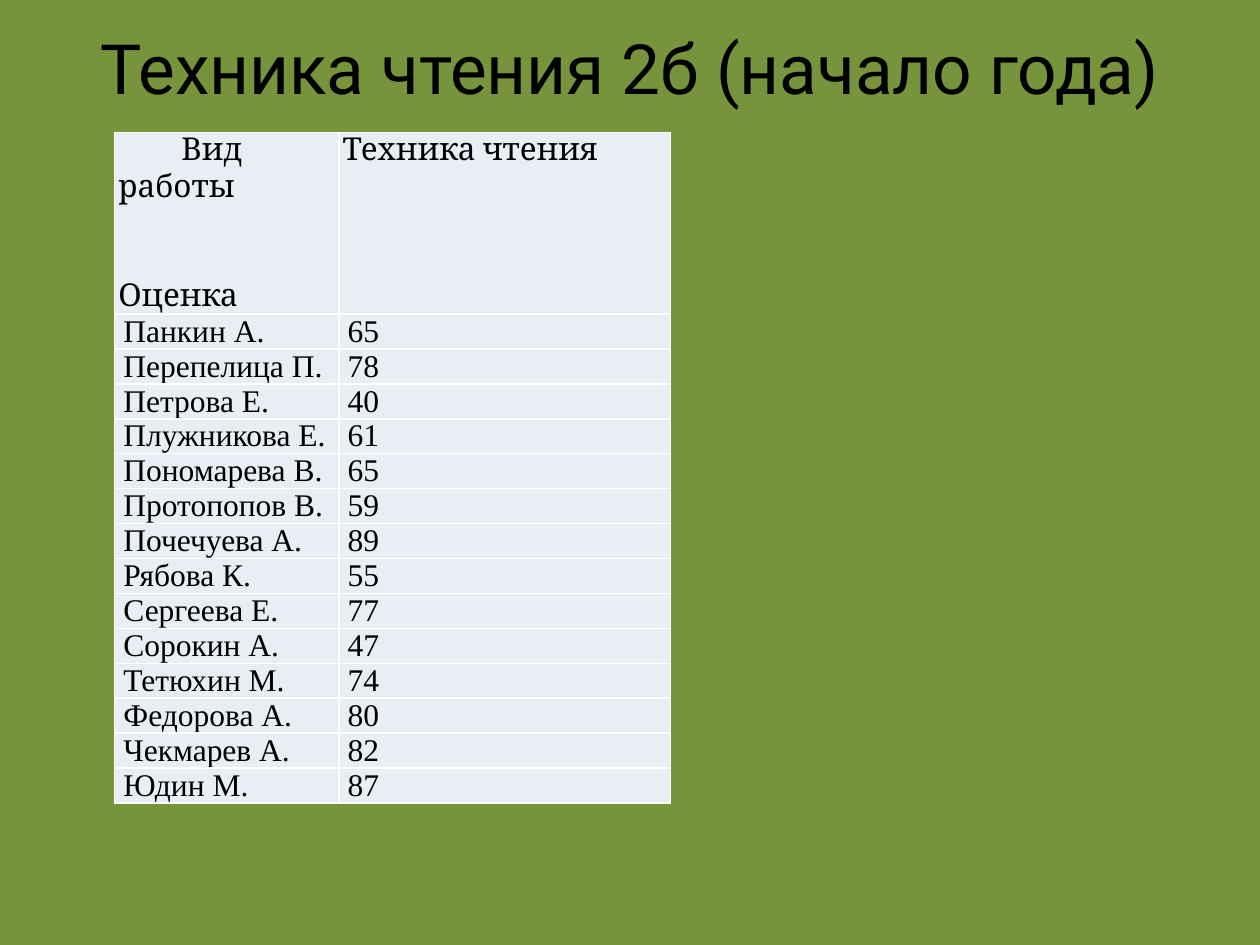
from dataclasses import dataclass

from lxml.etree import SubElement
from pptx import Presentation
from pptx.dml.color import RGBColor
from pptx.enum.text import MSO_ANCHOR, PP_ALIGN
from pptx.oxml.ns import qn
from pptx.util import Inches, Pt

COLORS = {"background": "77933C", "cell": "E9EDF4", "border": "FFFFFF", "text": "000000"}
SLIDE_WIDTH, SLIDE_HEIGHT = Inches(10), Inches(7.5)
COLUMN_WIDTHS = Inches(1.78), Inches(2.63)
HEADER_HEIGHT, ROW_HEIGHT = Inches(1.44), Inches(0.27)


@dataclass(frozen=True)
class Reading:
    pupil: str
    words: int


@dataclass(frozen=True)
class CellStyle:
    font: str
    inset: float


HEADER = CellStyle("Cambria", 0.03)
BODY = CellStyle("Times New Roman", 0.07)
READINGS = [
    Reading("Панкин А.", 65),
    Reading("Перепелица П.", 78),
    Reading("Петрова Е.", 40),
    Reading("Плужникова Е.", 61),
    Reading("Пономарева В.", 65),
    Reading("Протопопов В.", 59),
    Reading("Почечуева А.", 89),
    Reading("Рябова К.", 55),
    Reading("Сергеева Е.", 77),
    Reading("Сорокин А.", 47),
    Reading("Тетюхин М.", 74),
    Reading("Федорова А.", 80),
    Reading("Чекмарев А.", 82),
    Reading("Юдин М.", 87),
]


def color(name: str) -> RGBColor:
    return RGBColor.from_string(COLORS[name])


def style_font(paragraph, name: str, size: float) -> None:
    paragraph.font.name = name
    paragraph.font.size = Pt(size)
    paragraph.font.color.rgb = color("text")


def add_borders(cell) -> None:
    """Put the border lines ahead of the cell's fill, as the schema orders them."""
    properties = cell._tc.get_or_add_tcPr()
    for position, side in enumerate(("lnL", "lnR", "lnT", "lnB")):
        line = SubElement(properties, qn(f"a:{side}"), w=str(Pt(1)))
        fill = SubElement(line, qn("a:solidFill"))
        SubElement(fill, qn("a:srgbClr"), val=COLORS["border"])
        properties.insert(position, line)


def fill_cell(cell, text: str, style: CellStyle) -> None:
    cell.fill.solid()
    cell.fill.fore_color.rgb = color("cell")
    cell.margin_left = cell.margin_right = Inches(style.inset)
    cell.margin_top = cell.margin_bottom = 0
    cell.text = text
    for paragraph in cell.text_frame.paragraphs:
        style_font(paragraph, style.font, 18)
    add_borders(cell)


def add_title(slide, text: str) -> None:
    title = slide.shapes.title
    title.left, title.top = int(SLIDE_WIDTH * 0.05), int(SLIDE_HEIGHT * 0.04)
    title.width, title.height = int(SLIDE_WIDTH * 0.9), Inches(0.46)
    title.text_frame.text = text
    title.text_frame.vertical_anchor = MSO_ANCHOR.MIDDLE
    paragraph = title.text_frame.paragraphs[0]
    paragraph.alignment = PP_ALIGN.CENTER
    style_font(paragraph, "Roboto", 39.6)


def add_readings_table(slide, readings: list[Reading]) -> None:
    table = slide.shapes.add_table(
        len(readings) + 1, len(COLUMN_WIDTHS), Inches(0.91), int(SLIDE_HEIGHT * 0.14),
        sum(COLUMN_WIDTHS), HEADER_HEIGHT + ROW_HEIGHT * len(readings),
    ).table
    table.first_row = table.horz_banding = False
    for column, width in zip(table.columns, COLUMN_WIDTHS):
        column.width = width
    for row in table.rows:
        row.height = ROW_HEIGHT
    table.rows[0].height = HEADER_HEIGHT

    fill_cell(table.cell(0, 0), "Вид работы\nОценка", HEADER)
    fill_cell(table.cell(0, 1), "Техника чтения", HEADER)
    work, grade = table.cell(0, 0).text_frame.paragraphs
    work._p.get_or_add_pPr().set("indent", str(Inches(0.5)))
    grade.space_before = Pt(41.5)

    for row, reading in enumerate(readings, start=1):
        fill_cell(table.cell(row, 0), reading.pupil, BODY)
        fill_cell(table.cell(row, 1), str(reading.words), BODY)


def main() -> None:
    presentation = Presentation()
    presentation.slide_width, presentation.slide_height = SLIDE_WIDTH, SLIDE_HEIGHT
    slide = presentation.slides.add_slide(presentation.slide_layouts[5])
    slide.background.fill.solid()
    slide.background.fill.fore_color.rgb = color("background")
    add_title(slide, "Техника чтения 2б (начало года)")
    add_readings_table(slide, READINGS)
    presentation.save("out.pptx")


if __name__ == "__main__":
    main()
